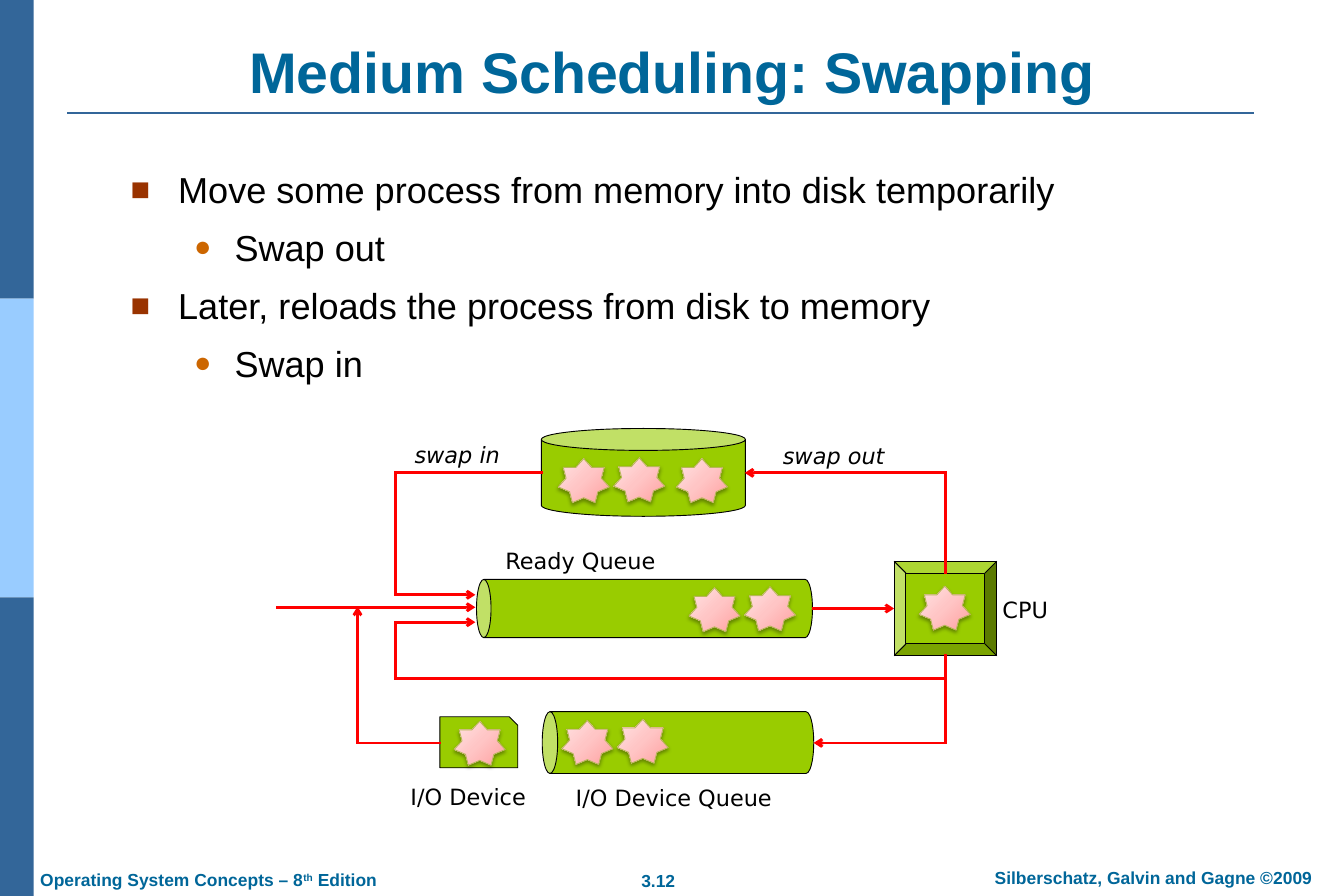
from copy import deepcopy

from lxml import etree
from pptx import Presentation
from pptx.dml.color import RGBColor
from pptx.enum.shapes import MSO_CONNECTOR, MSO_SHAPE
from pptx.enum.text import MSO_ANCHOR, PP_ALIGN
from pptx.oxml.ns import qn
from pptx.util import Pt

CAN, BEVEL, STAR = MSO_SHAPE.CAN, MSO_SHAPE.BEVEL, MSO_SHAPE.STAR_7_POINT
RECT, CARD = MSO_SHAPE.RECTANGLE, MSO_SHAPE.SNIP_1_RECTANGLE
STRAIGHT = MSO_CONNECTOR.STRAIGHT
LEFT, CENTER = PP_ALIGN.LEFT, PP_ALIGN.CENTER
TOP, BOTTOM = MSO_ANCHOR.TOP, MSO_ANCHOR.BOTTOM

BLACK = RGBColor(0x00, 0x00, 0x00)
NAVY = RGBColor(0x33, 0x66, 0x99)
SKY = RGBColor(0x99, 0xCC, 0xFF)
TEAL = RGBColor(0x00, 0x66, 0x99)
GREEN = RGBColor(0x99, 0xCC, 0x00)
RED = RGBColor(0xFF, 0x00, 0x00)
RUST = RGBColor(0x99, 0x33, 0x00)
ORANGE = RGBColor(0xCC, 0x66, 0x00)
OLIVE = RGBColor(0xB7, 0xB7, 0x58)
PINKS = [(0, RGBColor(0xFF, 0xA0, 0xA0)),
         (0.5, RGBColor(0xFF, 0xC5, 0xC5)),
         (1, RGBColor(0xFF, 0xE3, 0xE3))]

# level: character, colour, size in percent, left margin, hanging indent
BULLETS = {0: ("■", RUST, 90, 38.2, 38.2), 1: ("●", ORANGE, 80, 83.5, 32.4)}
BODY = [(0, "Move some process from memory into disk temporarily"),
        (1, "Swap out"),
        (0, "Later, reloads the process from disk to memory"),
        (1, "Swap in")]

FOOTERS = [(504, 694, 50, CENTER, ["3.12"]),
           (767, 692, 320, CENTER, ["Silberschatz, Galvin and Gagne ©2009"]),
           (22.3, 693.4, 294.5, LEFT, ["Operating System Concepts – 8", "th", " Edition"])]

LABELS = [("I/O Device Queue", 443, 626.4, 197, CENTER, False),
          ("I/O Device", 314, 626, 124.5, CENTER, False),
          ("Ready Queue", 399, 436.3, 136, LEFT, False),
          ("CPU", 798.5, 475.2, 52, LEFT, False),
          ("swap out", 622, 351.4, 102, LEFT, True),
          ("swap in", 326, 350.6, 89.5, LEFT, True)]

ROUTES = [[(222, 488), (382, 488)],
          [(652.5, 489), (718.5, 489)],
          [(759.6, 527), (759.6, 597), (653.8, 597)],
          [(759.6, 527), (759.6, 545), (318, 545), (318, 500), (382, 500)],
          [(353.5, 597), (287.3, 597), (287.3, 487.5)],
          [(759.6, 460), (759.6, 380), (598.5, 380)],
          [(435, 380), (318, 380), (318, 478), (382, 478)]]

PROCESSES = [(496, 578), (451.5, 579), (365, 579.6),
             (598.3, 471.6), (553.7, 472.3), (738.7, 471),
             (493.2, 368), (448.6, 368.6), (543.6, 368.6)]


def add_box(s, kind, x, y, w, h, fill, line=None, rotation=0):
    sp = s.shapes.add_shape(kind, Pt(x), Pt(y), Pt(w), Pt(h))
    sp.shadow.inherit = False
    sp.rotation = rotation
    sp.fill.solid()
    sp.fill.fore_color.rgb = fill
    if line is None:
        sp.line.fill.background()
    else:
        sp.line.color.rgb = line
        sp.line.width = Pt(0.75)
    return sp


def add_line(s, start, end, color, width):
    c = s.shapes.add_connector(STRAIGHT, *map(Pt, start + end))
    c.line.color.rgb = color
    c.line.width = Pt(width)
    etree.SubElement(c._element.spPr, qn("a:effectLst"))
    return c


def add_route(s, points):
    """Join the points with straight lines, the last one ending in an arrowhead."""
    legs = list(zip(points, points[1:]))
    for i, (start, end) in enumerate(legs, 1):
        ln = add_line(s, start, end, RED, 2.25).line._get_or_add_ln()
        if i == len(legs):
            etree.SubElement(ln, qn("a:tailEnd"), type="arrow")
        else:
            ln.set("cap", "sq")


def add_process(s, x, y):
    """A pink star with a diagonal gradient and a soft shadow below it."""
    sp = add_box(s, STAR, x, y, 41, 35.3, GREEN, OLIVE)
    sp.fill.gradient()
    sp.fill.gradient_angle = 135
    stops = sp._element.spPr.find(qn("a:gradFill")).find(qn("a:gsLst"))
    stops.insert(1, deepcopy(stops[0]))
    for stop, (position, color) in zip(sp.fill.gradient_stops, PINKS):
        stop.color.rgb = color
        stop.position = position
    effects = sp._element.spPr.find(qn("a:effectLst"))
    shadow = etree.SubElement(effects, qn("a:outerShdw"), blurRad=str(Pt(3.1)),
                              dist=str(Pt(1.8)), dir="5400000", rotWithShape="0")
    black = etree.SubElement(shadow, qn("a:srgbClr"), val=str(BLACK))
    etree.SubElement(black, qn("a:alpha"), val="35000")


def add_frame(s, x, y, w, h, inset, wrap=False, anchor=TOP):
    tf = s.shapes.add_textbox(Pt(x), Pt(y), Pt(w), Pt(h)).text_frame
    tf.margin_left = tf.margin_right = Pt(inset)
    tf.margin_top = tf.margin_bottom = Pt(inset / 2)
    tf.word_wrap = wrap
    tf.vertical_anchor = anchor
    return tf


def add_run(p, text, size, color, font="Arial", bold=False, italic=False):
    r = p.add_run()
    r.text = text
    r.font.name = font
    r.font.size = Pt(size)
    r.font.bold = bold
    r.font.italic = italic
    r.font.color.rgb = color
    return r


def add_bullet(p, level):
    char, color, percent, margin, hang = BULLETS[level]
    p.level = level
    pPr = p._p.get_or_add_pPr()
    pPr.set("marL", str(Pt(margin)))
    pPr.set("indent", str(-Pt(hang)))
    buClr = etree.SubElement(pPr, qn("a:buClr"))
    etree.SubElement(buClr, qn("a:srgbClr"), val=str(color))
    etree.SubElement(pPr, qn("a:buSzPct"), val=str(percent * 1000))
    etree.SubElement(pPr, qn("a:buFont"), typeface="Arial")
    etree.SubElement(pPr, qn("a:buChar"), char=char)


def add_body(s):
    tf = add_frame(s, 95, 129.6, 972, 476, 10, wrap=True)
    for i, (level, text) in enumerate(BODY):
        p = tf.add_paragraph() if i else tf.paragraphs[0]
        add_bullet(p, level)
        if i:
            p.space_before = Pt(11.7)
        add_run(p, text, 29, BLACK)


def add_footer(s, x, y, w, align, texts):
    p = add_frame(s, x, y, w, 27.4, 10).paragraphs[0]
    p.alignment = align
    for text in texts:
        r = add_run(p, text, 14, TEAL, bold=True)
        if text == "th":
            r._r.get_or_add_rPr().set("baseline", "30000")


def add_label(s, text, x, y, w, align, italic):
    p = add_frame(s, x, y, w, 28.8, 7.2).paragraphs[0]
    p.alignment = align
    add_run(p, text, 18, BLACK, "DejaVu Sans", italic=italic)


def main():
    prs = Presentation()
    prs.slide_width, prs.slide_height = Pt(1080), Pt(720)
    s = prs.slides.add_slide(prs.slide_layouts[6])

    for i, color in enumerate((NAVY, SKY, NAVY)):
        add_box(s, RECT, 0, 240 * i, 27, 240, color)
    add_line(s, (54, 90.5), (1008, 90.5), NAVY, 1.5)
    for footer in FOOTERS:
        add_footer(s, *footer)

    p = add_frame(s, 54, 29, 972, 60.5, 10, wrap=True, anchor=BOTTOM).paragraphs[0]
    p.alignment = CENTER
    add_run(p, "Medium Scheduling: Swapping", 46, TEAL, bold=True)
    add_body(s)

    add_box(s, CAN, 520, 487.6, 49.7, 218.2, GREEN, BLACK, 270)
    add_box(s, CARD, 353.5, 576, 62.6, 41, GREEN, BLACK)
    add_box(s, CAN, 494.5, 354, 46.8, 270, GREEN, BLACK, 270)
    add_box(s, BEVEL, 718.5, 451, 82.5, 76, GREEN, BLACK)
    add_box(s, CAN, 435, 344.3, 164, 70.6, GREEN, BLACK)
    for points in ROUTES:
        add_route(s, points)
    for label in LABELS:
        add_label(s, *label)
    for x, y in PROCESSES:
        add_process(s, x, y)

    prs.save("out.pptx")


if __name__ == "__main__":
    main()
